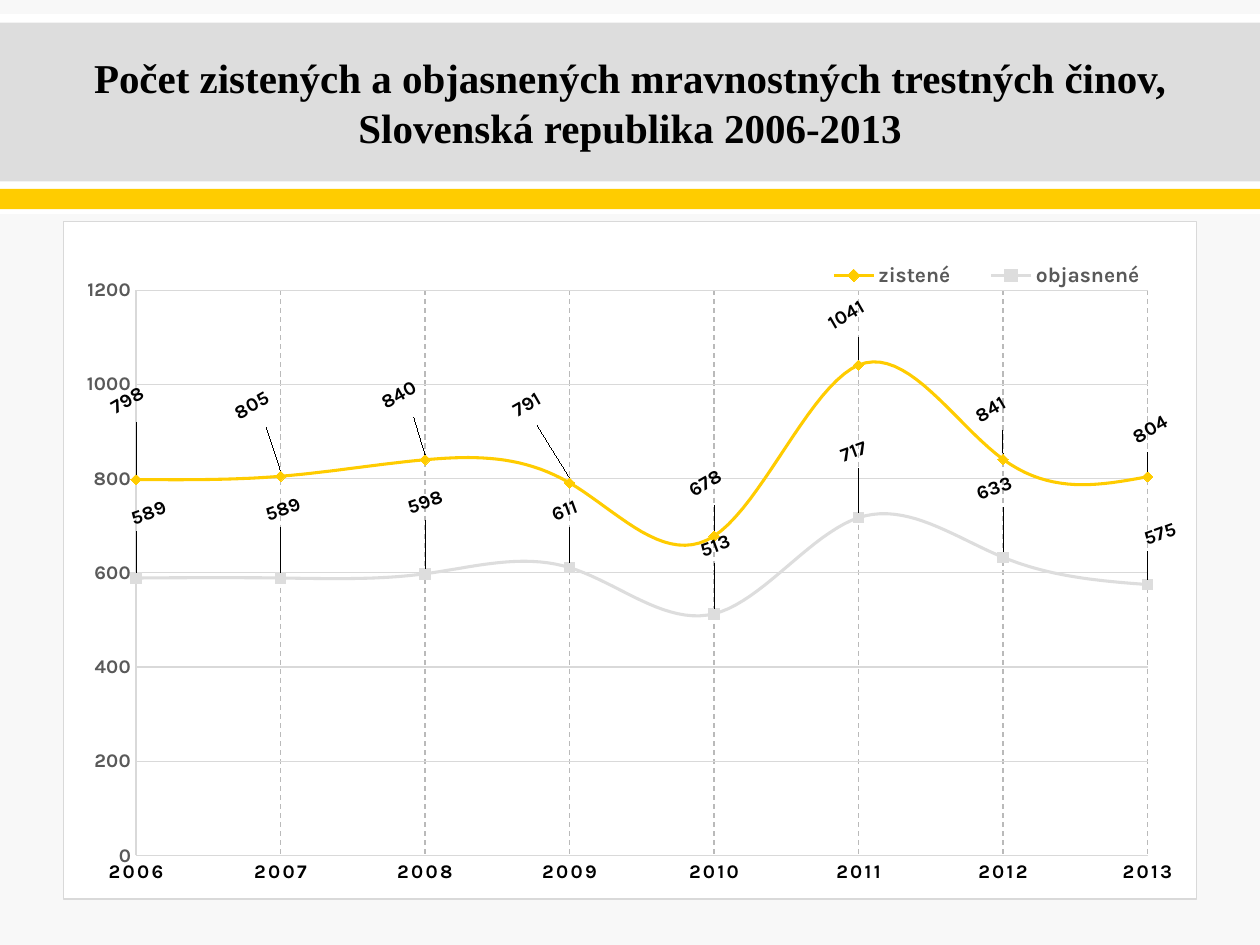
from lxml import etree
from pptx import Presentation
from pptx import util as u
from pptx.chart import data as chart_data
from pptx.dml import color
from pptx.enum import chart as kinds
from pptx.enum import dml, shapes, text
from pptx.oxml import parse_xml
from pptx.oxml.ns import nsdecls, qn

FONT = "Karla"
YELLOW, SILVER, GRID, INK = "FFCC00", "DDDDDD", "D9D9D9", "000000"
YEARS = [str(year) for year in range(2006, 2014)]
SERIES = [
    dict(name="zistené", values=(798, 805, 840, 791, 678, 1041, 841, 804),
         color=YELLOW, marker=kinds.XL_MARKER_STYLE.DIAMOND, turn=-30,
         shifts=[(-0.07, -0.4), (-0.23, -0.33), (-0.21, -0.28), (-0.34, -0.4),
                 (-0.07, -0.19), (-0.1, -0.16), (-0.1, -0.17), (0.02, -0.14)]),
    dict(name="objasnené", values=(589, 589, 598, 611, 513, 717, 633, 575),
         color=SILVER, marker=kinds.XL_MARKER_STYLE.SQUARE, turn=-20,
         shifts=[(0.1, -0.3), (0.02, -0.33), (0, -0.35), (-0.04, -0.25),
                 (0.01, -0.33), (-0.04, -0.32), (-0.07, -0.33), (0.1, -0.19)]),
]


def rgb(value):
    return color.RGBColor.from_string(value)


def paint(fill, value):
    fill.solid()
    fill.fore_color.rgb = rgb(value)


def style_font(font, size, value, name=FONT):
    font.size, font.bold, font.name = u.Pt(size), True, name
    font.color.rgb = rgb(value)


def style_line(line, value, width=0.75):
    line.color.rgb = rgb(value)
    line.width = u.Pt(width)


def manual_layout(target=None, **places):
    layout = etree.Element(qn("c:layout"))
    manual = etree.SubElement(layout, qn("c:manualLayout"))
    if target:
        etree.SubElement(manual, qn("c:layoutTarget"), val=target)
    if "w" in places:
        for mode in ("xMode", "yMode"):
            etree.SubElement(manual, qn(f"c:{mode}"), val="edge")
    for key, value in places.items():
        etree.SubElement(manual, qn(f"c:{key}"), val=f"{value:.4f}")
    return layout


def set_layout(parent, layout, after=None):
    for old in parent.findall(qn("c:layout")):
        parent.remove(old)
    if after is None:
        parent.insert(0, layout)
    else:
        parent.find(qn(after)).addnext(layout)


def add_header(page, left, top, width):
    for offset, height, value in ((0, 1.59, "FFFFFF"), (0.07, 1.26, SILVER),
                                  (1.39, 0.16, YELLOW)):
        band = page.shapes.add_shape(
            shapes.MSO_SHAPE.RECTANGLE, u.Inches(left), u.Inches(top + offset),
            u.Inches(width), u.Inches(height))
        band.shadow.inherit = False
        paint(band.fill, value)
        band.line.fill.background()
    title = page.shapes.title
    title.left, title.top = u.Inches(left + 0.5), u.Inches(top + 0.09)
    title.width, title.height = u.Inches(width - 1), u.Inches(1.22)
    frame = title.text_frame
    frame.text = ("Počet zistených a objasnených mravnostných trestných činov,\v"
                  "Slovenská republika 2006-2013")
    frame.word_wrap = True
    frame.vertical_anchor = text.MSO_ANCHOR.MIDDLE
    para = frame.paragraphs[0]
    para.alignment = text.PP_ALIGN.CENTER
    for span in para.runs:
        style_font(span.font, 23.4, INK, "Times New Roman")
    page.shapes._spTree.append(title._element)


def style_axis(axis, value, grid):
    axis.major_tick_mark = axis.minor_tick_mark = kinds.XL_TICK_MARK.NONE
    style_font(axis.tick_labels.font, 11, value)
    style_line(axis.format.line, GRID)
    axis.has_major_gridlines = True
    style_line(axis.major_gridlines.format.line, grid)


def style_series(series, info, width, height):
    series.smooth = True
    style_line(series.format.line, info["color"], 1.75)
    series.marker.style, series.marker.size = info["marker"], 6
    paint(series.marker.format.fill, info["color"])
    style_line(series.marker.format.line, info["color"])
    for index in range(len(YEARS)):
        label = series.points[index].data_label
        style_font(label.font, 11, INK)
        label.position = kinds.XL_LABEL_POSITION.ABOVE
    style_font(series.data_labels.font, 11, INK)
    series.data_labels.show_value = True
    labels = series._element.findall(".//" + qn("c:dLbl"))
    for label, (across, down) in zip(labels, info["shifts"]):
        set_layout(label, manual_layout(x=across / width, y=down / height), "c:idx")
    for body in series._element.iter(qn("a:bodyPr")):
        body.set("rot", str(info["turn"] * 60000))
        body.set("vert", "horz")


def add_crime_chart(page, left, top, width, height):
    data = chart_data.CategoryChartData()
    data.categories = YEARS
    for info in SERIES:
        data.add_series(info["name"], info["values"])
    chart = page.shapes.add_chart(
        kinds.XL_CHART_TYPE.LINE_MARKERS, u.Inches(left), u.Inches(top),
        u.Inches(width), u.Inches(height), data).chart
    chart.has_title = False
    style_font(chart.font, 11, INK)
    chart._chartSpace.find(qn("c:chart")).addnext(parse_xml(
        f'<c:spPr {nsdecls("c", "a")}><a:solidFill><a:srgbClr val="FFFFFF"/></a:solidFill>'
        f'<a:ln w="9525"><a:solidFill><a:srgbClr val="{GRID}"/></a:solidFill></a:ln></c:spPr>'))

    years, counts = chart.category_axis, chart.value_axis
    style_axis(years, INK, "BABABA")
    years.major_gridlines.format.line.dash_style = dml.MSO_LINE.DASH
    years.tick_labels.font._element.set("spc", "120")
    style_axis(counts, "595959", GRID)
    counts.minimum_scale, counts.maximum_scale, counts.major_unit = 0, 1200, 200
    for old in counts._element.findall(qn("c:crossBetween")):
        counts._element.remove(old)
    counts._element.find(qn("c:majorUnit")).addprevious(
        etree.Element(qn("c:crossBetween"), val="midCat"))

    chart.has_legend = True
    legend = chart.legend
    legend.position = kinds.XL_LEGEND_POSITION.TOP
    legend.include_in_layout = False
    style_font(legend.font, 12, "595959")
    set_layout(legend._element, manual_layout(x=0.65, y=0.05, w=0.33, h=0.06),
               "c:legendPos")
    plot_area = chart._chartSpace.find(".//" + qn("c:plotArea"))
    set_layout(plot_area, manual_layout("inner", x=0.064, y=0.102, w=0.893, h=0.834))

    chart.plots[0].vary_by_categories = False
    for series, info in zip(chart.plots[0].series, SERIES):
        style_series(series, info, width, height)


def main():
    deck = Presentation()
    deck.slide_width, deck.slide_height = u.Inches(10), u.Inches(7.5)
    page = deck.slides.add_slide(deck.slide_layouts[5])
    paint(page.background.fill, "F8F8F8")
    add_header(page, 0, 0.11, 10)
    add_crime_chart(page, 0.5, 1.75, 9, 5.39)
    deck.save("out.pptx")


if __name__ == "__main__":
    main()
